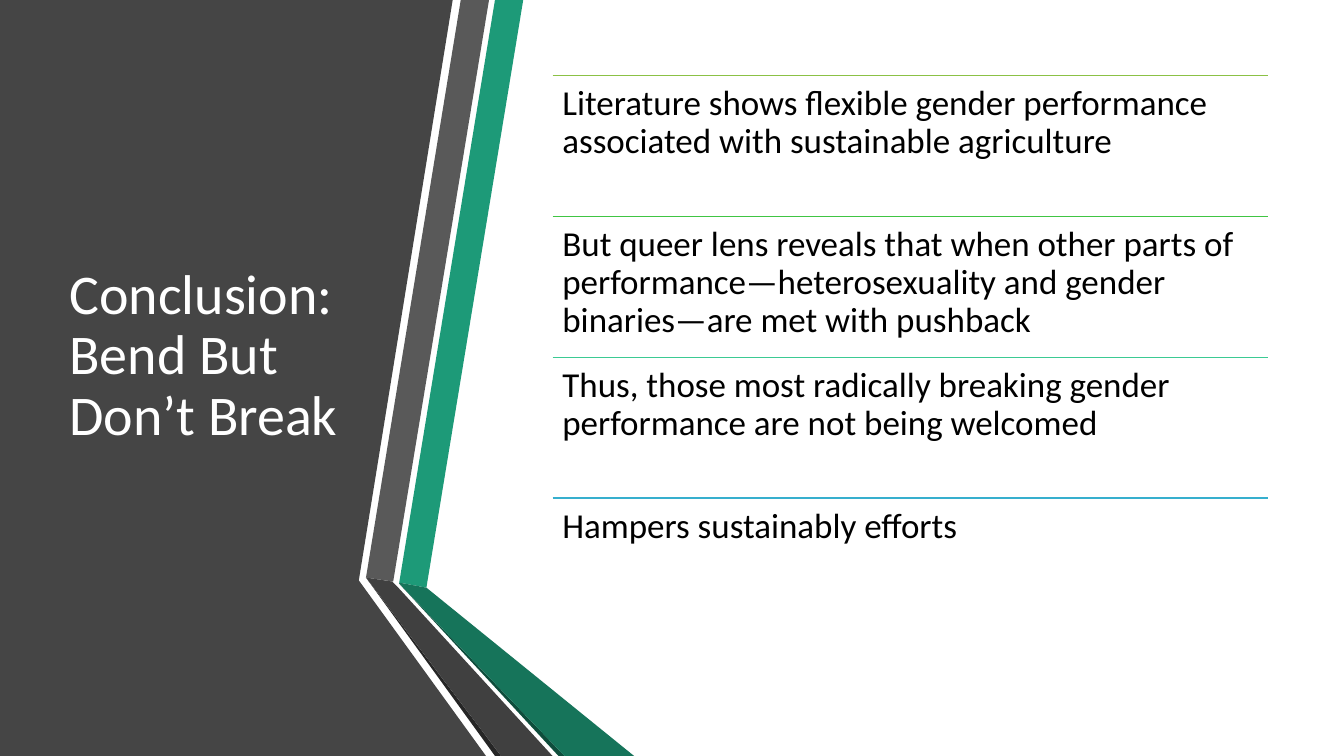
from lxml.etree import SubElement
from pptx import Presentation
from pptx.dml.color import RGBColor
from pptx.enum.shapes import MSO_CONNECTOR as Connector
from pptx.enum.text import MSO_ANCHOR as Anchor, MSO_AUTO_SIZE as AutoSize, PP_ALIGN as Align
from pptx.oxml.ns import qn
from pptx.util import Inches, Pt

COLORS = {
    "white": "FFFFFF", "black": "000000", "panel": "454545",
    "green": "1D9A78", "green_fold": "16745A", "green_edge": "0E4D3C",
    "gray": "595959", "gray_fold": "404040", "gray_edge": "262626",
    "lime": "8BC145", "leaf": "40C543", "mint": "3BCA93", "sky": "36AFCE",
}

# Panel and folded ribbons, back to front: colour and outline in inches
OUTLINES = [
    ("panel", [(0, 0), (4.49, 0), (3.56, 5.75), (3.56, 5.76), (4.82, 7.5), (0, 7.5)]),
    ("green", [(3.96, 5.78), (4.23, 5.83), (5.19, 0), (4.91, 0)]),
    ("gray", [(4.85, 0), (4.57, 0), (3.63, 5.73), (3.9, 5.77)]),
    ("gray_edge", [(3.63, 5.73), (4.91, 7.5), (4.97, 7.5)]),
    ("green_edge", [(3.96, 5.79), (5.54, 7.5), (5.6, 7.5)]),
    ("green_fold", [(3.96, 5.79), (5.6, 7.5), (6.29, 7.5), (4.23, 5.83), (3.96, 5.78)]),
    ("gray_fold", [(5.48, 7.5), (3.95, 5.83), (3.89, 5.77), (3.63, 5.73), (4.97, 7.5)]),
]

CONCLUSIONS = [
    ("lime", "Literature shows flexible gender performance associated with sustainable agriculture"),
    ("leaf", "But queer lens reveals that when other parts of performance—heterosexuality "
             "and gender binaries—are met with pushback"),
    ("mint", "Thus, those most radically breaking gender performance are not being welcomed"),
    ("sky", "Hampers sustainably efforts"),
]
LIST_LEFT, LIST_TOP, LIST_WIDTH, LIST_HEIGHT = 5.48, 0.75, 7.1, 5.59


class SlideBuilder:
    font = "Calibri"

    def __init__(self, slide):
        self.slide = slide
        self.shapes = slide.shapes

    def color(self, name):
        return RGBColor.from_string(COLORS[name])

    def background(self, color):
        fill = self.slide.background.fill
        fill.solid()
        fill.fore_color.rgb = self.color(color)

    def outline(self, color, points):
        start, *rest = [(Inches(x), Inches(y)) for x, y in points]
        builder = self.shapes.build_freeform(*start)
        builder.add_line_segments(rest, close=True)
        ribbon = builder.convert_to_shape()
        ribbon.shadow.inherit = False
        ribbon.fill.solid()
        ribbon.fill.fore_color.rgb = self.color(color)
        ribbon.line.fill.background()

    def set_text(self, frame, text, size, color, anchor):
        frame.text = text
        frame.word_wrap = True
        frame.auto_size = AutoSize.NONE
        frame.vertical_anchor = anchor
        paragraph = frame.paragraphs[0]
        paragraph.alignment = Align.LEFT
        paragraph.line_spacing = 0.9
        paragraph.font.name = self.font
        paragraph.font.size = Pt(size)
        paragraph.font.color.rgb = self.color(color)

    def title(self, text, left, top, width, height):
        heading = self.shapes.title
        heading.left, heading.top = Inches(left), Inches(top)
        heading.width, heading.height = Inches(width), Inches(height)
        self.set_text(heading.text_frame, text, 40, "white", Anchor.MIDDLE)
        # Bring the title in front of the panel
        self.shapes._spTree.append(heading._element)

    def rule(self, color, left, top, width):
        divider = self.shapes.add_connector(
            Connector.STRAIGHT, Inches(left), Inches(top), Inches(left + width), Inches(top))
        divider.line.color.rgb = self.color(color)
        divider.line.width = Pt(1)
        SubElement(divider._element.spPr, qn("a:effectLst"))

    def text(self, text, left, top, width, height):
        frame = self.shapes.add_textbox(
            Inches(left), Inches(top), Inches(width), Inches(height)).text_frame
        frame.margin_left = frame.margin_right = Inches(0.1)
        frame.margin_top = frame.margin_bottom = Inches(0.1)
        self.set_text(frame, text, 25, "black", Anchor.TOP)


def main():
    deck = Presentation()
    deck.slide_width, deck.slide_height = Inches(13.33), Inches(7.5)
    page = SlideBuilder(deck.slides.add_slide(deck.slide_layouts[5]))
    page.background("white")

    # Dark panel with folded ribbons
    for color, points in OUTLINES:
        page.outline(color, points)

    page.title("Conclusion: Bend But Don’t Break", 0.59, 0.75, 3.04, 5.58)

    # Conclusions, each under its own rule
    row_height = LIST_HEIGHT / len(CONCLUSIONS)
    for row, (color, conclusion) in enumerate(CONCLUSIONS):
        top = LIST_TOP + row * row_height
        page.rule(color, LIST_LEFT, top, LIST_WIDTH)
        page.text(conclusion, LIST_LEFT, top, LIST_WIDTH, row_height)

    deck.save("out.pptx")


if __name__ == "__main__":
    main()
